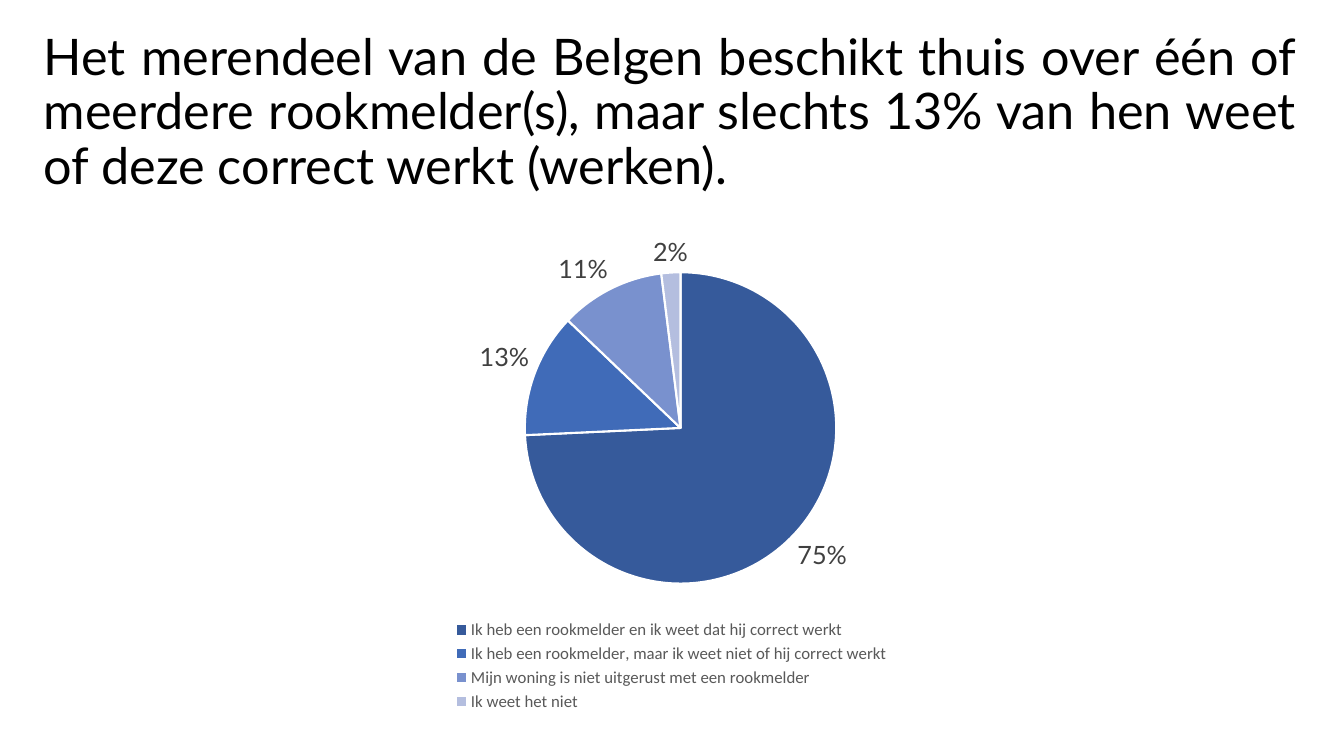
from typing import NamedTuple

from lxml.etree import SubElement
from pptx import Presentation
from pptx.chart.chart import Chart
from pptx.chart.data import CategoryChartData as ChartData
from pptx.dml.color import RGBColor
from pptx.enum.chart import XL_CHART_TYPE as Kind
from pptx.enum.chart import XL_LABEL_POSITION as Spot
from pptx.enum.chart import XL_LEGEND_POSITION as Side
from pptx.enum.text import MSO_ANCHOR as Anchor
from pptx.enum.text import MSO_AUTO_SIZE as Fit
from pptx.enum.text import PP_ALIGN as Align
from pptx.oxml.ns import qn
from pptx.slide import Slide
from pptx.text.text import Font
from pptx.util import Pt

BLACK = RGBColor(0x00, 0x00, 0x00)
WHITE = RGBColor(0xFF, 0xFF, 0xFF)
DARK = RGBColor(0x40, 0x40, 0x40)
GREY = RGBColor(0x59, 0x59, 0x59)

TITLE = (
    "Het merendeel van de Belgen beschikt thuis over één of meerdere "
    "rookmelder(s), maar slechts 13% van hen weet of deze correct werkt (werken)."
)


class Slice(NamedTuple):
    label: str
    share: float
    color: RGBColor


class Frame(NamedTuple):
    """Place inside the chart, as fractions of its size."""
    x: float
    y: float
    w: float
    h: float


SLICES = [
    Slice("Ik heb een rookmelder en ik weet dat hij correct werkt", 0.75,
          RGBColor(0x36, 0x5A, 0x9B)),
    Slice("Ik heb een rookmelder, maar ik weet niet of hij correct werkt", 0.13,
          RGBColor(0x40, 0x6B, 0xB8)),
    Slice("Mijn woning is niet uitgerust met een rookmelder", 0.11,
          RGBColor(0x79, 0x91, 0xCE)),
    Slice("Ik weet het niet", 0.02, RGBColor(0xB4, 0xBE, 0xDF)),
]


def set_font(font: Font, name: str, size: float, color: RGBColor) -> None:
    font.name = name
    font.size = Pt(size)
    font.color.rgb = color


def add_title(slide: Slide) -> None:
    title = slide.shapes.title
    title.left, title.top = Pt(24), Pt(29)
    title.width, title.height = Pt(909), Pt(104)
    frame = title.text_frame
    frame.text = TITLE
    frame.word_wrap = True
    frame.auto_size = Fit.NONE
    frame.vertical_anchor = Anchor.MIDDLE
    para = frame.paragraphs[0]
    para.alignment = Align.JUSTIFY
    para.line_spacing = 0.9
    set_font(para.font, "Lato", 36, BLACK)


def place(parent, index: int, frame: Frame, inner: bool = False) -> None:
    """Give a chart part a fixed place."""
    for old in parent.findall(qn("c:layout")):
        parent.remove(old)
    layout = SubElement(parent, qn("c:layout"))
    parent.insert(index, layout)
    manual = SubElement(layout, qn("c:manualLayout"))
    items = [("layoutTarget", "inner")] if inner else []
    items += [("xMode", "edge"), ("yMode", "edge")]
    items += [(key, str(val)) for key, val in frame._asdict().items()]
    for tag, val in items:
        SubElement(manual, qn(f"c:{tag}")).set("val", val)


def add_pie(slide: Slide) -> Chart:
    data = ChartData(number_format="0%")
    data.categories = [part.label for part in SLICES]
    data.add_series("Series 1", [part.share for part in SLICES])
    chart = slide.shapes.add_chart(
        Kind.PIE, Pt(171), Pt(157), Pt(618), Pt(354), data).chart
    chart.has_title = False
    set_font(chart.font, "Calibri", 10, BLACK)

    # Slices
    plot = chart.plots[0]
    plot.vary_by_categories = True
    for i, part in enumerate(SLICES):
        form = plot.series[0].points[i].format
        form.fill.solid()
        form.fill.fore_color.rgb = part.color
        form.line.color.rgb = WHITE
        form.line.width = Pt(1.5)

    # Percentages
    labels = plot.series[0].data_labels
    labels.show_value = True
    labels.show_percentage = False
    labels.number_format = "0%"
    labels.number_format_is_linked = False
    labels.position = Spot.OUTSIDE_END
    set_font(labels.font, "Lato", 18, DARK)
    return chart


def add_legend(chart: Chart) -> None:
    chart.has_legend = True
    legend = chart.legend
    legend.position = Side.BOTTOM
    legend.include_in_layout = False
    set_font(legend.font, "Calibri", 12, GREY)
    root = chart.element
    place(root.find(f".//{qn('c:legend')}"), 1, Frame(0.24, 0.8, 0.52, 0.2))
    place(root.find(f".//{qn('c:plotArea')}"), 0,
          Frame(0.33, 0.1, 0.36, 0.64), inner=True)


def main() -> None:
    deck = Presentation()
    deck.slide_width, deck.slide_height = Pt(960), Pt(540)
    slide = deck.slides.add_slide(deck.slide_layouts[5])
    add_title(slide)
    add_legend(add_pie(slide))
    deck.save("out.pptx")


if __name__ == "__main__":
    main()
